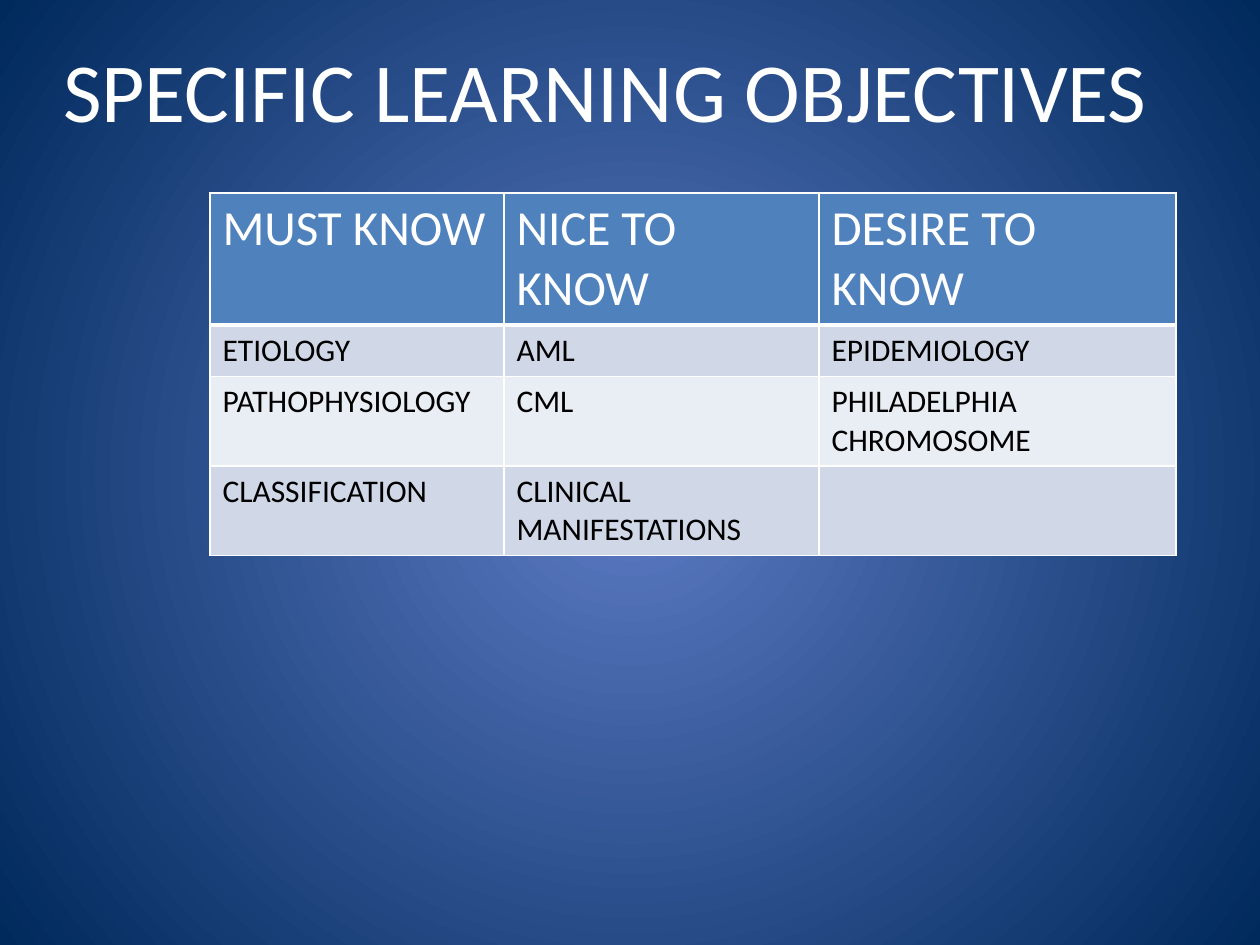
from pptx import Presentation
from pptx.dml.color import RGBColor
from pptx.enum.text import MSO_ANCHOR, PP_ALIGN
from pptx.oxml import parse_xml
from pptx.oxml.ns import nsdecls
from pptx.util import Inches, Pt

FONT = "Calibri"
WHITE, BLACK = "FFFFFF", "000000"
HEAD, BANDS = "4F81BD", ("D0D8E8", "E9EDF4")
GLOW, EDGE = "5E7CC5", "00295C"


def color(code):
    return RGBColor.from_string(code)


def grid(count):
    return Inches(count / 6)


class Deck:
    def __init__(self):
        self.show = Presentation()
        self.show.slide_width, self.show.slide_height = grid(60), grid(45)
        self.slide = self.show.slides.add_slide(self.show.slide_layouts[5])

    def glow(self, inner, outer):
        fill = self.slide.background.fill
        fill.gradient()
        for stop, code in zip(fill.gradient_stops, (inner, outer)):
            stop.color.rgb = color(code)
        line = self.slide.element.xpath(".//p:bg//a:lin")[0]
        line.getparent().replace(line, parse_xml(
            f'<a:path {nsdecls("a")} path="circle">'
            '<a:fillToRect l="50000" t="50000" r="50000" b="50000"/></a:path>'))

    def label(self, frame, text, size, code):
        run = frame.paragraphs[0].add_run()
        run.text = text
        font = run.font
        font.name, font.size, font.bold = FONT, Pt(size), False
        font.color.rgb = color(code)

    def title(self, text, left, top, width, height):
        shape = self.slide.shapes.title
        shape.left, shape.top = grid(left), grid(top)
        shape.width, shape.height = grid(width), grid(height)
        frame = shape.text_frame
        frame.margin_left = frame.margin_right = 0
        frame.margin_top = frame.margin_bottom = 0
        frame.vertical_anchor = MSO_ANCHOR.MIDDLE
        frame.paragraphs[0].alignment = PP_ALIGN.LEFT
        self.label(frame, text, 48, WHITE)

    def border(self, cell, base):
        props = cell._tc.get_or_add_tcPr()
        for side, width in zip("LRTB", (1, 1, 1, base)):
            props.append(parse_xml(
                f'<a:ln{side} {nsdecls("a")} w="{Pt(width)}"><a:solidFill>'
                f'<a:srgbClr val="{WHITE}"/></a:solidFill></a:ln{side}>'))

    def table(self, data, left, top, widths, height):
        table = self.slide.shapes.add_table(
            len(data), len(widths), grid(left), grid(top),
            grid(sum(widths)), grid(height * len(data))).table
        for col, width in zip(table.columns, widths):
            col.width = grid(width)
        for row, texts in enumerate(data):
            table.rows[row].height = grid(height)
            size, ink, fill, base = (
                (18, BLACK, BANDS[(row - 1) % 2], 1) if row
                else (28, WHITE, HEAD, 3))
            for col, text in enumerate(texts):
                cell = table.cell(row, col)
                self.border(cell, base)
                cell.fill.solid()
                cell.fill.fore_color.rgb = color(fill)
                if text:
                    self.label(cell.text_frame, text, size, ink)


def main():
    deck = Deck()
    deck.glow(GLOW, EDGE)
    deck.title("SPECIFIC LEARNING OBJECTIVES", 3, 1.8, 54, 4.86)
    deck.table([
        ("MUST KNOW", "NICE TO KNOW", "DESIRE TO KNOW"),
        ("ETIOLOGY", "AML", "EPIDEMIOLOGY"),
        ("PATHOPHYSIOLOGY", "CML", "PHILADELPHIA CHROMOSOME"),
        ("CLASSIFICATION", "CLINICAL MANIFESTATIONS", ""),
    ], 10, 9.18, (14, 15, 17), 2.43)
    deck.show.save("out.pptx")


if __name__ == "__main__":
    main()
